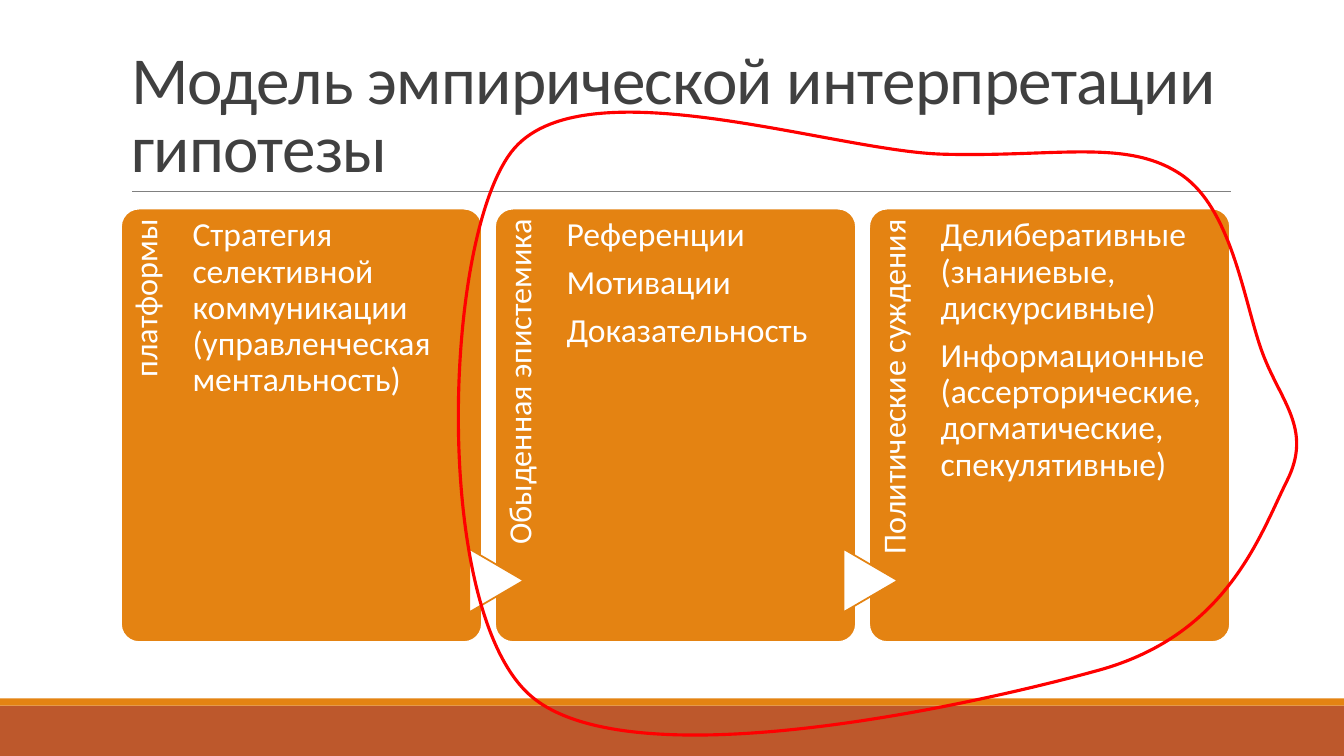
from dataclasses import dataclass

from lxml.etree import SubElement
from pptx import Presentation
from pptx.dml.color import RGBColor
from pptx.enum.shapes import MSO_CONNECTOR, MSO_SHAPE
from pptx.enum.text import MSO_ANCHOR, MSO_AUTO_SIZE, PP_ALIGN
from pptx.oxml.ns import qn
from pptx.util import Pt

PX = 9144
TITLE_ONLY = 5


@dataclass(frozen=True)
class Theme:
    """Colours, font and type sizes of the slide."""
    font: str = "Calibri"
    white: str = "FFFFFF"
    orange: str = "E48312"
    rust: str = "BD582C"
    ink: str = "404040"
    rule: str = "808080"
    outline: str = "FF0000"
    title_size: int = 48
    body_size: int = 24
    label_size: int = 23


THEME = Theme()

CARDS = [
    ("платформы",
     ["Стратегия селективной коммуникации (управленческая ментальность)"]),
    ("Обыденная эпистемика",
     ["Референции", "Мотивации", "Доказательность"]),
    ("Политические суждения",
     ["Делиберативные (знаниевые, дискурсивные)",
      "Информационные (ассерторические, догматические, спекулятивные)"]),
]

LOOP_START = (797, 236)
LOOP_CURVES = [
    ((779, 185), (767, 92), (714, 60)),
    ((661, 27), (591, 45), (481, 42)),
    ((371, 39), (121, -49), (53, 40)),
    ((-15, 130), (-25, 494), (72, 579)),
    ((170, 665), (514, 588), (639, 553)),
    ((764, 517), (796, 419), (822, 367)),
    ((849, 314), (815, 287), (797, 236)),
]


def emu(box):
    """Turn a box in px into EMU lengths."""
    return [length * PX for length in box]


def apply(target, values):
    """Set attributes from a dict of format values."""
    for name, value in values.items():
        setattr(target, name, value)


def style_line(shape, colour, width):
    """Give a shape or connector a solid line."""
    shape.line.color.rgb = RGBColor.from_string(colour)
    shape.line.width = Pt(width)


def add_block(page, kind, box, fill, line=None):
    """Draw a flat preset shape, with a line if a colour is given."""
    shape = page.shapes.add_shape(kind, *emu(box))
    shape.shadow.inherit = False
    shape.fill.solid()
    shape.fill.fore_color.rgb = RGBColor.from_string(fill)
    if line:
        style_line(shape, line, 1.25)
    else:
        shape.line.fill.background()
    return shape


def write(shape, lines, size, colour, insets, para_format, anchor=MSO_ANCHOR.TOP):
    """Fill a text frame with one paragraph per line and return its spans."""
    frame = shape.text_frame
    left, top, right, bottom = emu(insets)
    apply(frame, {
        "word_wrap": True, "auto_size": MSO_AUTO_SIZE.NONE,
        "vertical_anchor": anchor, "margin_left": left, "margin_top": top,
        "margin_right": right, "margin_bottom": bottom,
    })
    spans = []
    for index, line in enumerate(lines):
        para = frame.add_paragraph() if index else frame.paragraphs[0]
        apply(para, para_format)
        span = para.add_run()
        span.text = line
        apply(span.font, {"name": THEME.font, "size": Pt(size)})
        span.font.color.rgb = RGBColor.from_string(colour)
        spans.append(span)
    return spans


def draw_footer(page, box):
    """Draw the footer band with its thin stripe on top."""
    left, top, width, height = box
    stripe = 7
    add_block(page, MSO_SHAPE.RECTANGLE,
              (left, top + stripe, width, height - stripe), THEME.rust)
    add_block(page, MSO_SHAPE.RECTANGLE, (left, top, width, stripe), THEME.orange)


def draw_title(page, box):
    """Place the title and the rule beneath it."""
    left, top, width, height = box
    title = page.shapes.title
    apply(title, dict(zip(("left", "top", "width", "height"), emu(box))))
    spans = write(title, ["Модель эмпирической интерпретации гипотезы"],
                  THEME.title_size, THEME.ink, (10, 5, 10, 5),
                  {"alignment": PP_ALIGN.LEFT, "line_spacing": 0.85},
                  MSO_ANCHOR.BOTTOM)
    for span in spans:
        span.font._element.set("spc", "-50")
    bottom = top + height
    rule = page.shapes.add_connector(
        MSO_CONNECTOR.STRAIGHT,
        *emu((left + 11, bottom, left + width + 1, bottom)))
    style_line(rule, THEME.rule, 0.5)
    SubElement(rule._element.spPr, qn("a:effectLst"))


def draw_card(page, box, label, items, has_arrow):
    """Draw a card with its upright label, list and incoming arrow."""
    left, top, width, height = box
    card = add_block(page, MSO_SHAPE.ROUNDED_RECTANGLE, box,
                     THEME.orange, THEME.white)
    card.adjustments[0] = 0.05
    spacing = {"line_spacing": 0.9, "space_after": Pt(8.4)}

    upright = page.shapes.add_textbox(*emu((left - 141, top + 140, 353, 72)))
    upright.rotation = 270
    write(upright, [label], THEME.label_size, THEME.white, (0, 9, 11, 0),
          {"alignment": PP_ALIGN.RIGHT, **spacing})

    if has_arrow:
        arrow = add_block(page, MSO_SHAPE.FLOWCHART_EXTRACT,
                          (left - 30, top + 342, 63, 54),
                          THEME.white, THEME.orange)
        arrow.rotation = 90

    body = page.shapes.add_textbox(*emu((left + 71, top, 267, height)))
    write(body, items, THEME.body_size, THEME.white, (0, 9, 0, 0),
          {"alignment": PP_ALIGN.LEFT, **spacing})


def draw_cards(page, box):
    """Spread the cards evenly over the box."""
    left, top, width, height = box
    gap = 13
    card_width = (width - gap * (len(CARDS) - 1)) // len(CARDS)
    for index, (label, items) in enumerate(CARDS):
        place = (left + index * (card_width + gap), top, card_width, height)
        draw_card(page, place, label, items, index > 0)


def add_step(outline, kind, points):
    """Append one drawing step to a freeform outline."""
    step = SubElement(outline, qn(kind))
    for x, y in points:
        SubElement(step, qn("a:pt"), x=str(x * PX), y=str(y * PX))


def draw_loop(page, box):
    """Draw the freehand loop as smooth curves within its box."""
    left, top, width, height = box
    right, bottom = left + width, top + height
    builder = page.shapes.build_freeform(left, top, scale=PX)
    builder.add_line_segments([(right, top), (right, bottom), (left, bottom)])
    loop = builder.convert_to_shape()
    outline = next(loop._element.iter(qn("a:path")))
    for step in list(outline):
        outline.remove(step)
    outline.set("w", str(width * PX))
    outline.set("h", str(height * PX))
    add_step(outline, "a:moveTo", [LOOP_START])
    for curve in LOOP_CURVES:
        add_step(outline, "a:cubicBezTo", curve)
    SubElement(outline, qn("a:close"))
    loop.shadow.inherit = False
    loop.fill.background()
    style_line(loop, THEME.outline, 2.25)


def main():
    """Build the deck and save it."""
    deck = Presentation()
    deck.slide_width, deck.slide_height = emu((1333, 750))
    page = deck.slides.add_slide(deck.slide_layouts[TITLE_ONLY])
    draw_footer(page, (0, 693, 1333, 57))
    draw_title(page, (120, 31, 1100, 159))
    draw_cards(page, (120, 207, 1100, 430))
    draw_loop(page, (454, 111, 832, 618))
    deck.save("out.pptx")


if __name__ == "__main__":
    main()
